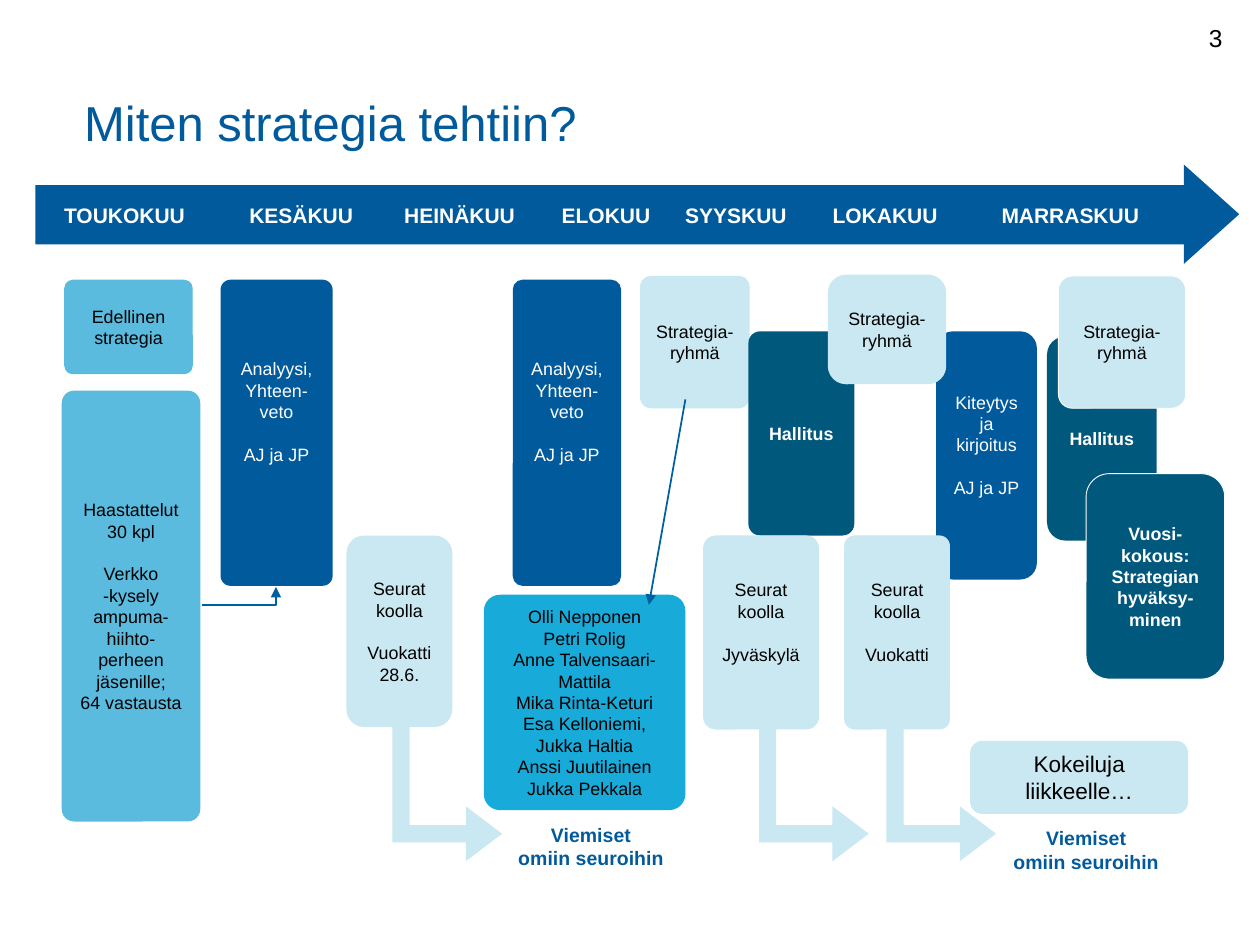
from dataclasses import dataclass

from lxml import etree
from pptx import Presentation
from pptx.dml.color import RGBColor
from pptx.enum.shapes import MSO_CONNECTOR, MSO_SHAPE
from pptx.enum.text import MSO_ANCHOR, PP_ALIGN
from pptx.oxml.ns import qn
from pptx.util import Inches, Pt

LEFT, CENTER, RIGHT = PP_ALIGN.LEFT, PP_ALIGN.CENTER, PP_ALIGN.RIGHT
TOP, MIDDLE = MSO_ANCHOR.TOP, MSO_ANCHOR.MIDDLE
RECTANGLE, ROUNDED = MSO_SHAPE.RECTANGLE, MSO_SHAPE.ROUNDED_RECTANGLE
TRIANGLE, BENT_ARROW = MSO_SHAPE.ISOSCELES_TRIANGLE, MSO_SHAPE.BENT_UP_ARROW
STRAIGHT, ELBOW = MSO_CONNECTOR.STRAIGHT, MSO_CONNECTOR.ELBOW

SLIDE_W, SLIDE_H = Inches(10), Inches(7.5)
COL, ROW = SLIDE_W / 100, SLIDE_H / 75
CARD_SIZE, LINE_PITCH = 10.2, 12.2

COLORS = {
    "blue": "005A9B", "line": "005FA0", "petrol": "00587C", "sky": "5ABBDF",
    "cyan": "18AAD9", "ice": "C9E8F1", "white": "FFFFFF", "black": "000000",
}

MONTHS = ["TOUKOKUU", "KESÄKUU", "HEINÄKUU", "ELOKUU", "SYYSKUU", "LOKAKUU", "MARRASKUU"]
MONTH_TABS = [14.7, 27, 39.5, 49.3, 61, 74.4]

ANALYSIS = "Analyysi,\nYhteen-veto\n\nAJ ja JP"
STEERING = "Strategia-ryhmä"
TEAM = ("Olli Nepponen\nPetri Rolig\nAnne Talvensaari-Mattila\nMika Rinta-Keturi\n"
        "Esa Kelloniemi, Jukka Haltia\nAnssi Juutilainen\nJukka Pekkala")
INTERVIEWS = ("Haastattelut\n30 kpl\n\nVerkko\n"
              "-kysely ampuma-hiihto-perheen jäsenille;\n64 vastausta")


@dataclass
class Card:
    """One rounded box of the timeline, placed in columns and rows of its region."""
    place: tuple
    fill: str
    text: str
    radius: float = 0.167
    lift: int = 0
    size: float = CARD_SIZE
    outlined: bool = False


CARDS = [
    Card((74.3, 6.3, 8, 19.7), "blue", "Kiteytys ja kirjoitus\n\nAJ ja JP", lift=1),
    Card((5.1, 2.2, 10.2, 7.5), "sky", "Edellinen strategia", 0.09),
    Card((4.9, 11, 11, 34.2), "sky", INTERVIEWS, 0.09),
    Card((17.5, 2.2, 8.9, 24.3), "blue", ANALYSIS, 0.09, 2),
    Card((27.5, 22.5, 8.4, 15.2), "ice", "Seurat koolla\n\nVuokatti\n28.6."),
    Card((50.8, 1.9, 8.7, 10.5), "ice", STEERING, 0.1),
    Card((59.4, 6.3, 8.4, 16.2), "petrol", "Hallitus", 0.11),
    Card((55.8, 22.5, 9.2, 15.4), "ice", "Seurat koolla\n\nJyväskylä", 0.11, 1),
    Card((83.1, 6.7, 8.7, 16.2), "petrol", "Hallitus"),
    Card((86.2, 17.6, 11, 16.3), "petrol", "Vuosi-kokous:\nStrategian hyväksy-minen",
         outlined=True),
    Card((77, 38.8, 17.3, 5.8), "ice", "Kokeiluja liikkeelle…", size=12.9),
    Card((40.7, 2.2, 8.6, 24.3), "blue", ANALYSIS, 0.09, 2),
    Card((67, 22.5, 8.4, 15.4), "ice", "Seurat koolla\n\nVuokatti", 0.1, 1),
    Card((65.7, 1.8, 9.4, 8.7), "ice", "Strategia-\nryhmä"),
    Card((84, 1.9, 10.1, 10.5), "ice", STEERING, 0.11, outlined=True),
    Card((38.4, 27.2, 16, 17.1), "cyan", TEAM, 0.08),
]


def rgb(name):
    """Return a palette colour."""
    return RGBColor.from_string(COLORS[name])


def within(region, place):
    """Turn a place inside a region into left, top, width and height on the slide."""
    x, y, w, h = place
    return (round((region[0] + x) * COL), round((region[1] + y) * ROW),
            round(w * COL), round(h * ROW))


def write(frame, text, size, color, bold=False, align=CENTER, anchor=TOP):
    """Fill a text frame; a blank line in the text becomes space before a paragraph."""
    frame.word_wrap, frame.vertical_anchor = True, anchor
    paragraph = None
    for group in text.split("\n\n"):
        for index, line in enumerate(group.split("\n")):
            opens_group = paragraph is not None and index == 0
            paragraph = frame.add_paragraph() if paragraph is not None else frame.paragraphs[0]
            paragraph.text, paragraph.alignment = line, align
            if opens_group:
                paragraph.space_before = Pt(LINE_PITCH)
            font = paragraph.font
            font.name, font.size, font.bold = "Arial", Pt(size), bold
            font.color.rgb = rgb(color)


def add_label(slide, region, place, text, size, color, **layout):
    """Add a text box and return its frame."""
    frame = slide.shapes.add_textbox(*within(region, place)).text_frame
    write(frame, text, size, color, **layout)
    return frame


def add_block(slide, region, place, preset, fill, rotation=0, adjust=()):
    """Add a flat filled shape."""
    block = slide.shapes.add_shape(preset, *within(region, place))
    block.shadow.inherit = False
    block.fill.solid()
    block.fill.fore_color.rgb = rgb(fill)
    block.line.fill.background()
    block.rotation = rotation
    for index, value in enumerate(adjust):
        block.adjustments[index] = value
    return block


def add_link(slide, region, kind, start, end):
    """Add a thin connector with an arrowhead at its end."""
    points = [within(region, (*point, 0, 0))[:2] for point in (start, end)]
    link = slide.shapes.add_connector(kind, *points[0], *points[1])
    link.line.color.rgb, link.line.width = rgb("line"), Pt(1)
    properties = link._element.spPr
    if kind == ELBOW:
        properties.find(qn("a:prstGeom")).set("prst", "bentConnector2")
    etree.SubElement(properties.find(qn("a:ln")), qn("a:tailEnd"), type="triangle")
    etree.SubElement(properties, qn("a:effectLst"))


def add_heading(slide, region):
    """Place the title and the slide number."""
    add_label(slide, region, (5.7, 6.7, 83.7, 6), "Miten strategia tehtiin?", 28, "blue",
              align=LEFT, anchor=MIDDLE)
    add_label(slide, region, (74.7, 1.3, 23.3, 5.2), "3", 14, "black", align=RIGHT)


def add_month_arrow(slide, region):
    """Place the long arrow and its months, aligned by tab stops."""
    add_block(slide, region, (0, 1.6, 92.1, 4.7), RECTANGLE, "blue")
    add_block(slide, region, (89.4, 1.7, 7.9, 4.4), TRIANGLE, "blue", rotation=90)
    months = add_label(slide, region, (1.3, 2.5, 93.2, 3), "\t".join(MONTHS), 12, "white",
                       bold=True, align=LEFT)
    properties = months.paragraphs[0]._p.get_or_add_pPr()
    tabs = etree.Element(qn("a:tabLst"))
    for stop in MONTH_TABS:
        etree.SubElement(tabs, qn("a:tab"), pos=str(round(stop * COL)), algn="l")
    properties.find(qn("a:defRPr")).addprevious(tabs)


def add_card(slide, region, card):
    """Place one card with its text."""
    block = add_block(slide, region, card.place, ROUNDED, card.fill, adjust=[card.radius])
    if card.outlined:
        block.line.color.rgb, block.line.width = rgb("white"), Pt(0.5)
    frame = block.text_frame
    frame.margin_left = frame.margin_right = Inches(0.08)
    frame.margin_bottom = Inches(0.05) + Pt(card.lift * LINE_PITCH)
    color = "white" if card.fill in ("blue", "petrol") else "black"
    write(frame, card.text, card.size, color, bold=card.fill == "petrol", anchor=MIDDLE)


def add_timeline(slide, region):
    """Place the outcome arrows, the cards, the outcome labels and the links."""
    for x in (29.3, 58.4, 68.5):
        add_block(slide, region, (x, 37.8, 12.4, 8.7), BENT_ARROW, "ice", 90,
                  (0.156, 0.25, 0.331))
    for card in CARDS:
        add_card(slide, region, card)
    for x, y in ((39.8, 44.8), (79.1, 45.1)):
        add_label(slide, region, (x, y, 14.2, 4.7), "Viemiset\nomiin seuroihin", 11.1, "blue",
                  bold=True)
    add_link(slide, region, ELBOW, (16, 28), (21.9, 26.6))
    add_link(slide, region, STRAIGHT, (54.4, 11.7), (51.5, 28))


def main():
    """Build and save the slide."""
    deck = Presentation()
    deck.slide_width, deck.slide_height = SLIDE_W, SLIDE_H
    slide = deck.slides.add_slide(deck.slide_layouts[6])
    add_heading(slide, (0, 0, 100, 13))
    add_month_arrow(slide, (2.8, 13.1, 97.2, 7.9))
    add_timeline(slide, (0, 20, 100, 55))
    deck.save("out.pptx")


if __name__ == "__main__":
    main()
